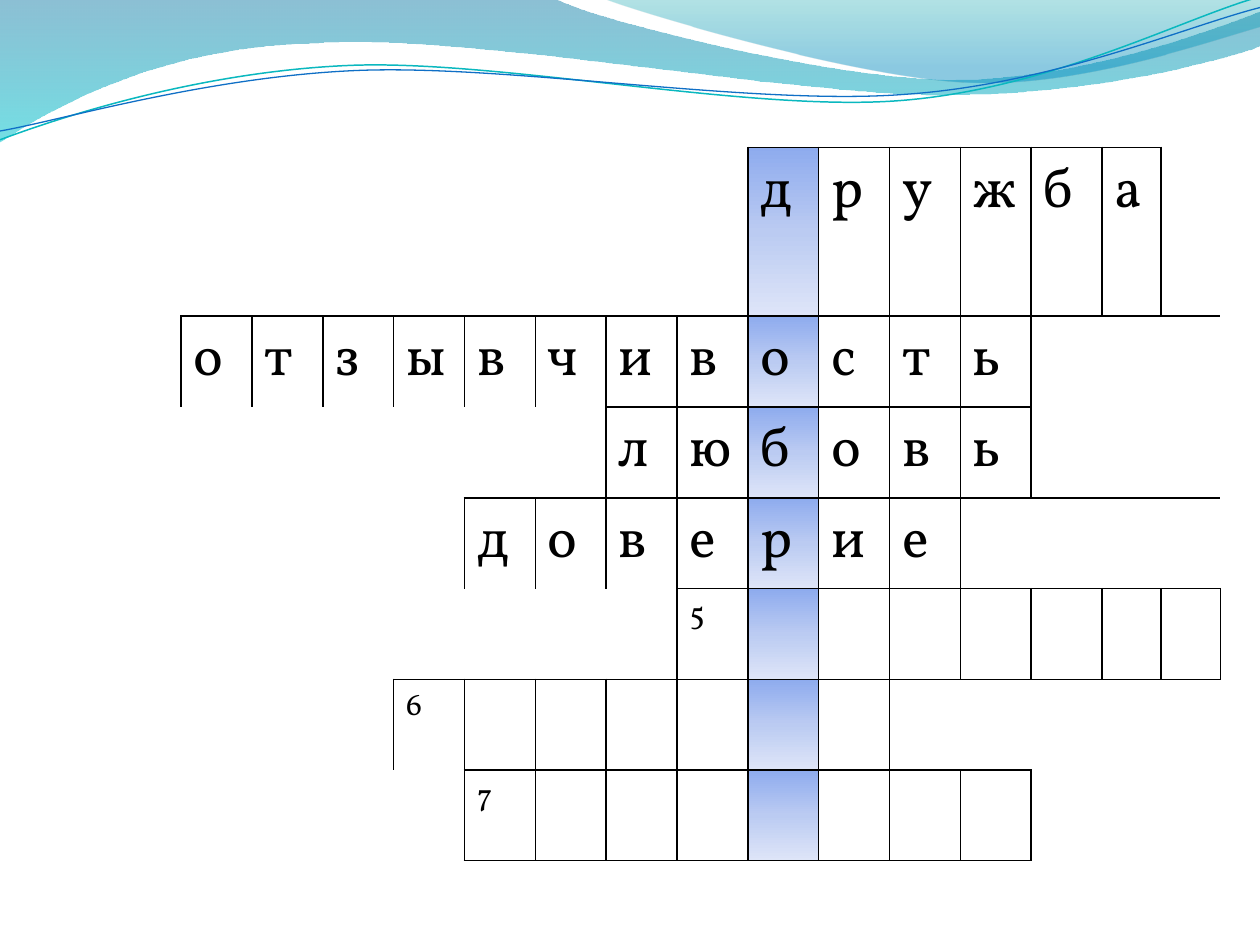
from lxml import etree
from pptx import Presentation
from pptx.dml.color import RGBColor
from pptx.oxml.ns import qn
from pptx.util import Inches, Pt

FONT = "Vollkorn"
BLACK = "000000"
COLUMN_STOPS = [(0, "8EABEE", 100), (50, "BBCBF2", 100), (100, "DEE5F8", 100)]


def paint_gradient(fill, properties, stops):
    fill.gradient()
    fill.gradient_angle = 270
    stop_list = properties.find(".//" + qn("a:gsLst"))
    for old_stop in list(stop_list):
        stop_list.remove(old_stop)
    for position, color, opacity in stops:
        stop = etree.SubElement(stop_list, qn("a:gs"), pos=str(position * 1000))
        paint = etree.SubElement(stop, qn("a:srgbClr"), val=color)
        if opacity < 100:
            etree.SubElement(paint, qn("a:alpha"), val=str(opacity * 1000))


def draw_curve(page, path, closed):
    parts = [[Inches(number) for number in part] for part in path]
    builder = page.shapes.build_freeform(*parts[0], scale=1.0)
    builder.add_line_segments([part[-2:] for part in parts[1:]], close=closed)
    shape = builder.convert_to_shape()
    shape.shadow.inherit = False
    segments = list(shape.element.spPr.iter(qn("a:lnTo")))
    for segment, part in zip(segments, parts[1:]):
        if len(part) == 6:
            curve = etree.Element(qn("a:cubicBezTo"))
            for x, y in zip(part[::2], part[1::2]):
                etree.SubElement(curve, qn("a:pt"), x=str(x - shape.left),
                                 y=str(y - shape.top))
            segment.getparent().replace(segment, curve)
    return shape


deck = Presentation()
deck.slide_width, deck.slide_height = Inches(10), Inches(7.5)
page = deck.slides.add_slide(deck.slide_layouts[6])

bands = [
    ([(0, 0), (4.4, -0.01), (4.76, 0.17, 6.64, 0.63, 7.58, 0.63),
      (8.53, 0.63, 9.58, 0.26, 10, 0.09), (10.01, 0.36),
      (9.83, 0.44, 8.7, 0.76, 7.46, 0.75), (6.22, 0.75, 3.82, 0.28, 2.57, 0.34),
      (1.29, 0.36, 0.46, 0.83, -0.01, 1.13), (0, 0)],
     [(0, "0074A1", 45), (100, "00C6CF", 55)]),
    ([(4.79, -0.01), (5.09, 0.11, 6.82, 0.62, 7.69, 0.65),
      (8.56, 0.69, 9.61, 0.32, 10, 0.21), (10, 0), (4.79, -0.01)],
     [(0, "00A1A9", 30), (80, "008BBF", 45)]),
]
for path, stops in bands:
    band = draw_curve(page, path, True)
    band.line.fill.background()
    paint_gradient(band.fill, band.element.spPr, stops)

waves = [
    ([(0, 1.11), (0.48, 0.93, 1.58, 0.57, 2.77, 0.52),
      (3.95, 0.47, 5.93, 0.89, 7.13, 0.8), (8.33, 0.71, 9.38, 0.15, 9.98, -0.02)],
     "0AB8BF", 0.85),
    ([(0, 1.04), (0.47, 0.96, 1.64, 0.61, 2.83, 0.56),
      (4.03, 0.51, 5.97, 0.84, 7.17, 0.75), (8.36, 0.67, 9.41, 0.21, 10, 0.06)],
     "0F6FC6", 0.75),
]
for path, color, width in waves:
    wave = draw_curve(page, path, False)
    wave.fill.background()
    wave.line.color.rgb = RGBColor.from_string(color)
    wave.line.width = Pt(width)

words = [(9, 15, "дружба"), (1, 13, "отзывчивость"), (7, 13, "любовь"),
         (5, 12, "доверие"), (8, 16, "5"), (4, 11, "6"), (5, 13, "7")]
rules = [(9, 15), (1, 16), (7, 13), (5, 16), (8, 16), (4, 16), (5, 13), (5, 13)]
right_blanks = [(1, 13, 2), (3, 12, 3), (5, 11, 5), (6, 13, 6)]
key_column = 9

unit = deck.slide_width * 9 // 160
widths = [2 * unit] + [unit] * 13 + [Inches(0.47)] * 2
heights = [Inches(1.34)] + [Inches(0.72)] * 6
frame = page.shapes.add_table(len(heights), len(widths), deck.slide_width // 32,
                              Inches(1.17), sum(widths), sum(heights))
grid = frame.table
grid.first_row = grid.horz_banding = False
for column, width in zip(grid.columns, widths):
    column.width = width
for row, height in zip(grid.rows, heights):
    row.height = height

for row, (start, end, word) in enumerate(words):
    if start > 1:
        grid.cell(row, 0).merge(grid.cell(row, start - 1))
for row, column, last_row in right_blanks:
    grid.cell(row, column).merge(grid.cell(last_row, len(widths) - 1))

for row, (start, end, word) in enumerate(words):
    for column in range(len(widths)):
        cell = grid.cell(row, column)
        if start <= column < start + len(word):
            cell.text_frame.text = word[column - start]
            span = cell.text_frame.paragraphs[0].runs[0]
            span.font.name = FONT
            span.font.size = Pt(18 if word.isdigit() else 32)
            span.font.color.rgb = RGBColor.from_string(BLACK)
        cell.fill.background()
        properties = cell._tc.get_or_add_tcPr()
        if column == key_column:
            paint_gradient(cell.fill, properties, COLUMN_STOPS)
        right = column + (cell.span_width if cell.is_merge_origin else 1)
        bottom = row + (cell.span_height if cell.is_merge_origin else 1)
        sides = [("a:lnL", start <= column <= end),
                 ("a:lnR", start <= right <= end),
                 ("a:lnT", rules[row][0] <= column < rules[row][1]),
                 ("a:lnB", rules[bottom][0] <= column < rules[bottom][1])]
        for order, (tag, visible) in enumerate(sides):
            border = etree.Element(qn(tag), w=str(Pt(1)))
            properties.insert(order, border)
            if visible:
                paint = etree.SubElement(border, qn("a:solidFill"))
                etree.SubElement(paint, qn("a:srgbClr"), val=BLACK)
            else:
                etree.SubElement(border, qn("a:noFill"))

deck.save("out.pptx")
